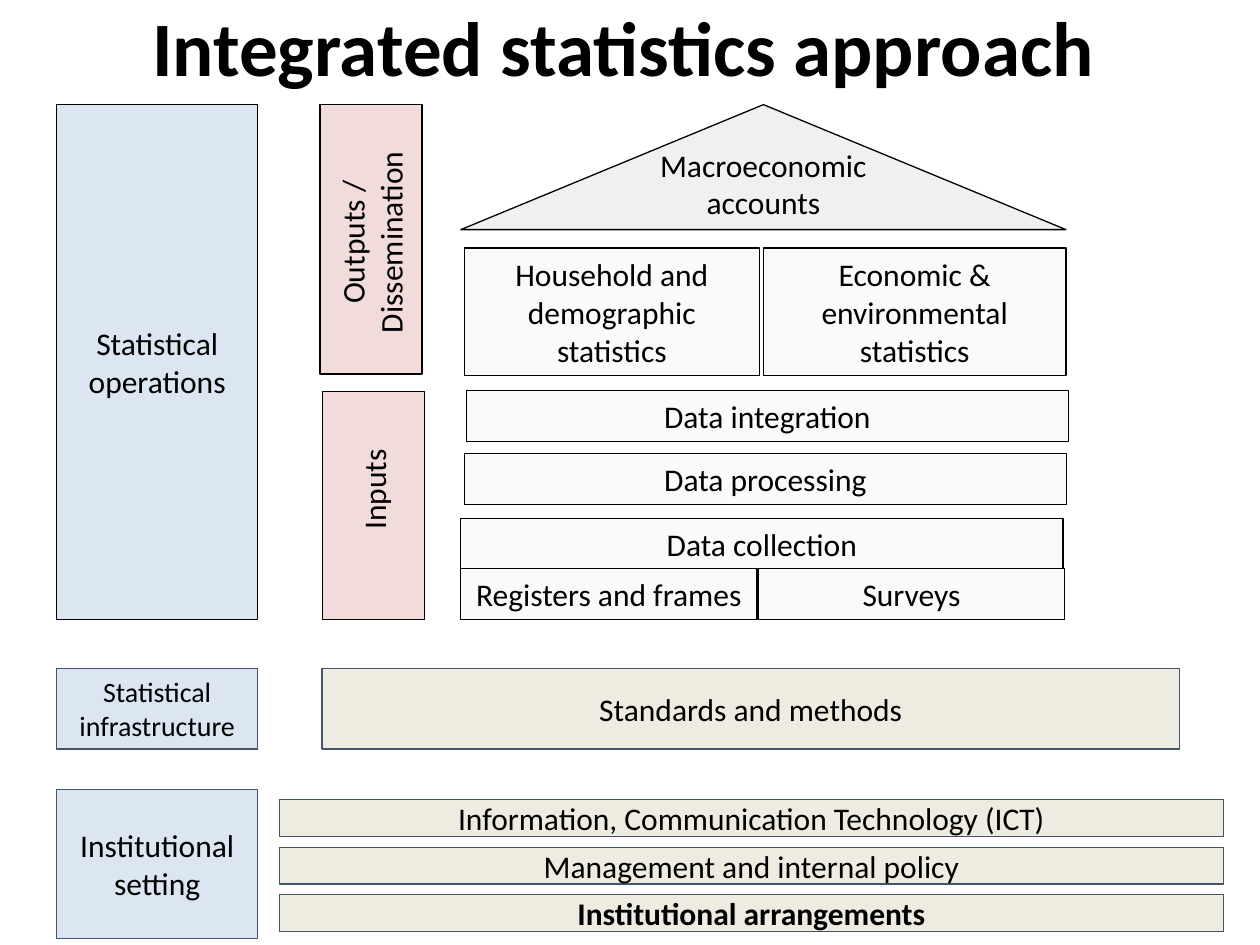
from pptx import Presentation
from pptx.dml.color import RGBColor
from pptx.enum.shapes import MSO_SHAPE
from pptx.enum.text import MSO_ANCHOR, PP_ALIGN
from pptx.util import Cm, Pt

COLORS = {
    "text": "000000", "black": "000000", "slate": "44546A",
    "level": "DCE6F2", "stage": "F2DCDB", "roof": "F0F0F0",
    "block": "FAFAFA", "base": "EEECE1",
}
FONT = "Calibri"

# Content; positions are (left, top, width, height) in cm
TITLE = "Integrated statistics approach"

LEVEL_LEFT, LEVEL_WIDTH = 1.14, 4.06
LEVELS = [  # text, top, height, size, line
    ("Statistical operations", 2.11, 10.38, 18, "black"),
    ("Statistical infrastructure", 13.47, 1.63, 16, "slate"),
    ("Institutional setting", 15.92, 3.0, 18, "slate"),
]

STAGES = [  # text, position, bottom inset
    ("Outputs / Dissemination", (6.45, 2.11, 2.06, 5.43), 0.13),
    ("Inputs", (6.5, 7.89, 2.06, 4.6), 0.89),
]

ROOF = ("Macroeconomic\naccounts", (9.29, 2.11, 12.2, 2.52))
BLOCKS = [
    ("Household and demographic statistics", (9.36, 5.0, 5.95, 2.57)),
    ("Economic & environmental statistics", (15.39, 5.0, 6.1, 2.57)),
    ("Data integration", (9.4, 7.87, 12.14, 1.03)),
    ("Data processing", (9.36, 9.14, 12.14, 1.03)),
    ("Data collection", (9.29, 10.45, 12.14, 1.03)),
    ("Registers and frames", (9.29, 11.46, 5.97, 1.03)),
    ("Surveys", (15.29, 11.46, 6.17, 1.03)),
]

STANDARDS = ("Standards and methods", (6.49, 13.47, 17.29, 1.63))
SETTING_LEFT, SETTING_TOP, SETTING_WIDTH, SETTING_HEIGHT = 5.64, 16.12, 19.02, 0.74
SETTING_PITCH = 0.96
SETTINGS = [  # text, bold
    ("Information, Communication Technology (ICT)", False),
    ("Management and internal policy", False),
    ("Institutional arrangements", True),
]


def write(shape, text, size, bold=False):
    frame = shape.text_frame
    frame.word_wrap = True
    frame.vertical_anchor = MSO_ANCHOR.MIDDLE
    frame.text = text
    for paragraph in frame.paragraphs:
        paragraph.alignment = PP_ALIGN.CENTER
        for run in paragraph.runs:
            run.font.name = FONT
            run.font.size = Pt(size)
            run.font.bold = bold
            run.font.color.rgb = RGBColor.from_string(COLORS["text"])


def add_box(slide, text, position, fill, line="black", size=18, bold=False,
            kind=MSO_SHAPE.RECTANGLE):
    box = slide.shapes.add_shape(kind, *map(Cm, position))
    box.shadow.inherit = False
    box.fill.solid()
    box.fill.fore_color.rgb = RGBColor.from_string(COLORS[fill])
    box.line.color.rgb = RGBColor.from_string(COLORS[line])
    box.line.width = Pt(0.75)
    write(box, text, size, bold)
    return box


def main():
    deck = Presentation()
    deck.slide_width, deck.slide_height = Cm(25.4), Cm(19.05)
    slide = deck.slides.add_slide(deck.slide_layouts[6])

    # Title
    title = slide.shapes.add_textbox(Cm(1.14), Cm(-0.66), Cm(22.86), Cm(3.18))
    write(title, TITLE, 44, bold=True)

    # Institutional setting and standards
    for row, (text, bold) in enumerate(SETTINGS):
        top = SETTING_TOP + row * SETTING_PITCH
        add_box(slide, text, (SETTING_LEFT, top, SETTING_WIDTH, SETTING_HEIGHT),
                "base", "slate", bold=bold)
    add_box(slide, *STANDARDS, "base", "slate")

    # Levels on the left
    for text, top, height, size, line in LEVELS:
        add_box(slide, text, (LEVEL_LEFT, top, LEVEL_WIDTH, height),
                "level", line, size)

    # Stages with upward text
    for text, position, inset in STAGES:
        stage = add_box(slide, text, position, "stage")
        stage.text_frame.margin_bottom = Cm(inset)
        stage.text_frame._txBody.bodyPr.set("vert", "vert270")

    # House of statistics
    roof = add_box(slide, *ROOF, "roof", kind=MSO_SHAPE.ISOSCELES_TRIANGLE)
    roof.adjustments[0] = 0.5
    roof.text_frame.margin_bottom = Cm(0.73)
    for text, position in BLOCKS:
        add_box(slide, text, position, "block")

    deck.save("out.pptx")


if __name__ == "__main__":
    main()
